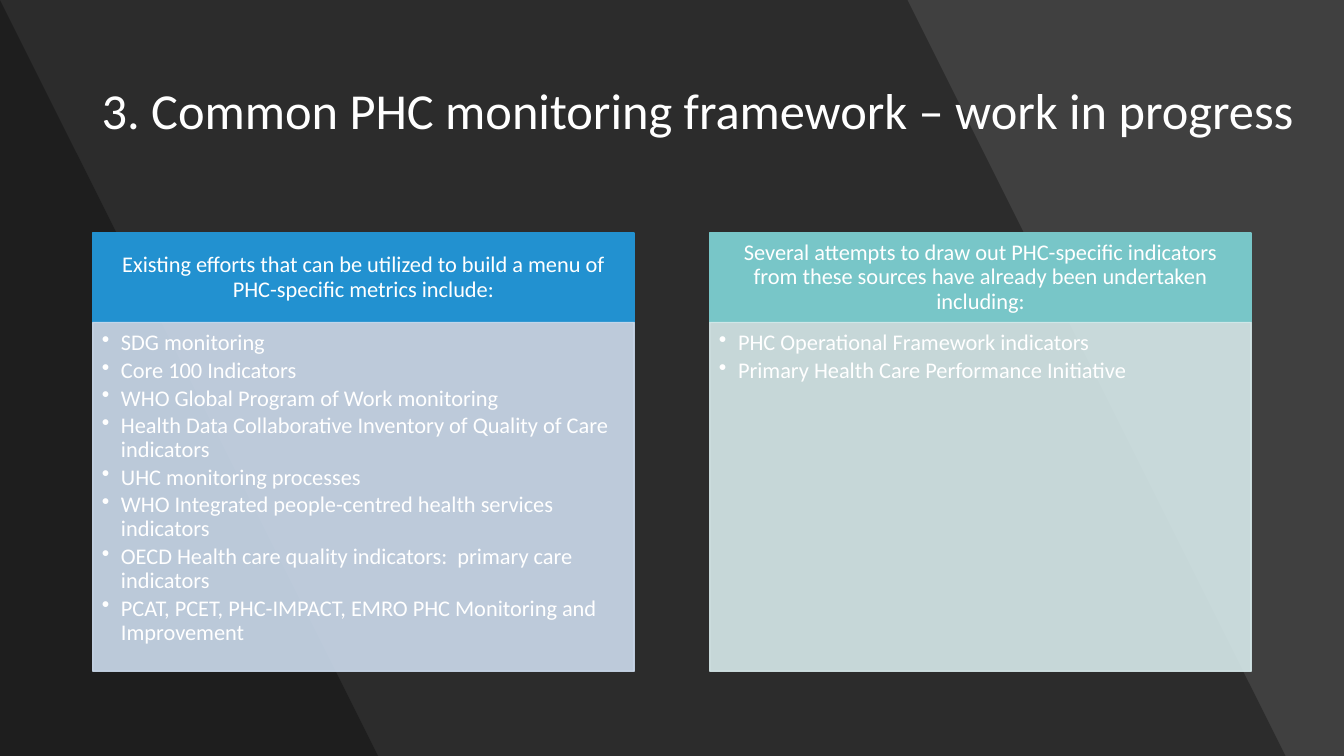
from dataclasses import dataclass

from lxml import etree
from pptx import Presentation
from pptx import util as u
from pptx.dml.color import RGBColor
from pptx.enum import shapes, text
from pptx.oxml import ns

COLORS = {
    "background": "404040",
    "shade": "000000",
    "text": "FFFFFF",
    "blue": "2291D0",
    "pale_blue": "CDDCEE",
    "teal": "78C6C8",
    "pale_teal": "D7EAEB",
}
FONT = "Calibri"
PAGE_WIDTH, PAGE_HEIGHT = 13.33, 7.5
COLUMN_LEFT, COLUMN_STEP, COLUMN_WIDTH = 0.92, 6.12, 5.37
HEADER_TOP, HEADER_HEIGHT, LIST_HEIGHT = 2.31, 0.89, 3.46
BULLET_INDENT = 0.19


@dataclass
class Band:
    top_right: float
    bottom_right: float


@dataclass
class Column:
    header: str
    header_color: str
    list_color: str
    items: list[str]


BANDS = [Band(9.42, 12.89), Band(0.44, 3.92)]
COLUMNS = [
    Column(
        "Existing efforts that can be utilized to build a menu of PHC-specific metrics include:",
        "blue",
        "pale_blue",
        [
            "SDG monitoring",
            "Core 100 Indicators",
            "WHO Global Program of Work monitoring",
            "Health Data Collaborative Inventory of Quality of Care indicators",
            "UHC monitoring processes",
            "WHO Integrated people-centred health services indicators",
            "OECD Health care quality indicators:  primary care indicators",
            "PCAT, PCET, PHC-IMPACT, EMRO PHC Monitoring and Improvement",
        ],
    ),
    Column(
        "Several attempts to draw out PHC-specific indicators from these sources "
        "have already been undertaken including:",
        "teal",
        "pale_teal",
        ["PHC Operational Framework indicators", "Primary Health Care Performance Initiative"],
    ),
]


def rgb(name: str) -> RGBColor:
    return RGBColor.from_string(COLORS[name])


def set_opacity(shape, percent: int) -> None:
    for color in shape._element.spPr.iter(ns.qn("a:srgbClr")):
        etree.SubElement(color, ns.qn("a:alpha"), val=str(percent * 1000))


def add_band(page, band: Band) -> None:
    builder = page.shapes.build_freeform(0, 0, scale=u.Inches(1))
    builder.add_line_segments(
        [(band.top_right, 0), (band.bottom_right, PAGE_HEIGHT), (0, PAGE_HEIGHT)], close=True
    )
    shape = builder.convert_to_shape()
    shape.shadow.inherit = False
    shape.fill.solid()
    shape.fill.fore_color.rgb = rgb("shade")
    shape.line.fill.background()
    set_opacity(shape, 30)


def add_panel(page, left: float, top: float, height: float, color: str):
    panel = page.shapes.add_shape(
        shapes.MSO_SHAPE.RECTANGLE,
        u.Inches(left), u.Inches(top), u.Inches(COLUMN_WIDTH), u.Inches(height),
    )
    panel.shadow.inherit = False
    panel.fill.solid()
    panel.fill.fore_color.rgb = rgb(color)
    panel.line.color.rgb = rgb(color)
    panel.line.width = u.Pt(1)
    return panel


def set_frame(frame, anchor, margins: tuple[float, float, float, float]) -> None:
    frame.word_wrap = True
    frame.vertical_anchor = anchor
    frame.margin_left, frame.margin_top, frame.margin_right, frame.margin_bottom = map(
        u.Inches, margins
    )


def write(para, wording: str, size: int, align, space_after: float = 0) -> None:
    para.text = wording
    para.alignment = align
    para.line_spacing = 0.9
    para.space_after = u.Pt(space_after)
    para.font.name = FONT
    para.font.size = u.Pt(size)
    para.font.color.rgb = rgb("text")


def add_bullet(para) -> None:
    props = para._p.get_or_add_pPr()
    props.set("marL", str(u.Inches(BULLET_INDENT)))
    props.set("indent", str(-u.Inches(BULLET_INDENT)))
    bullet = etree.Element(ns.qn("a:buChar"), char="•")
    props.find(ns.qn("a:defRPr")).addprevious(bullet)


def add_title(page) -> None:
    box = page.shapes.add_textbox(u.Inches(0.91), u.Inches(0.4), u.Inches(12.04), u.Inches(1.45))
    set_frame(box.text_frame, text.MSO_ANCHOR.MIDDLE, (0.1, 0.05, 0.1, 0.05))
    write(
        box.text_frame.paragraphs[0],
        "3. Common PHC monitoring framework – work in progress",
        36,
        text.PP_ALIGN.LEFT,
    )


def add_column(page, column: Column, left: float) -> None:
    header = add_panel(page, left, HEADER_TOP, HEADER_HEIGHT, column.header_color)
    set_frame(header.text_frame, text.MSO_ANCHOR.MIDDLE, (0.12, 0.07, 0.12, 0.07))
    write(header.text_frame.paragraphs[0], column.header, 16, text.PP_ALIGN.CENTER)

    panel = add_panel(page, left, HEADER_TOP + HEADER_HEIGHT, LIST_HEIGHT, column.list_color)
    set_opacity(panel, 90)
    frame = panel.text_frame
    set_frame(frame, text.MSO_ANCHOR.TOP, (0.09, 0.09, 0.12, 0.14))
    for index, item in enumerate(column.items):
        para = frame.add_paragraph() if index else frame.paragraphs[0]
        write(para, item, 16, text.PP_ALIGN.LEFT, space_after=2.4)
        add_bullet(para)


def main() -> None:
    deck = Presentation()
    deck.slide_width = u.Inches(PAGE_WIDTH)
    deck.slide_height = u.Inches(PAGE_HEIGHT)
    page = deck.slides.add_slide(deck.slide_layouts[6])
    page.background.fill.solid()
    page.background.fill.fore_color.rgb = rgb("background")
    for band in BANDS:
        add_band(page, band)
    add_title(page)
    for index, column in enumerate(COLUMNS):
        add_column(page, column, COLUMN_LEFT + index * COLUMN_STEP)
    deck.save("out.pptx")


if __name__ == "__main__":
    main()
